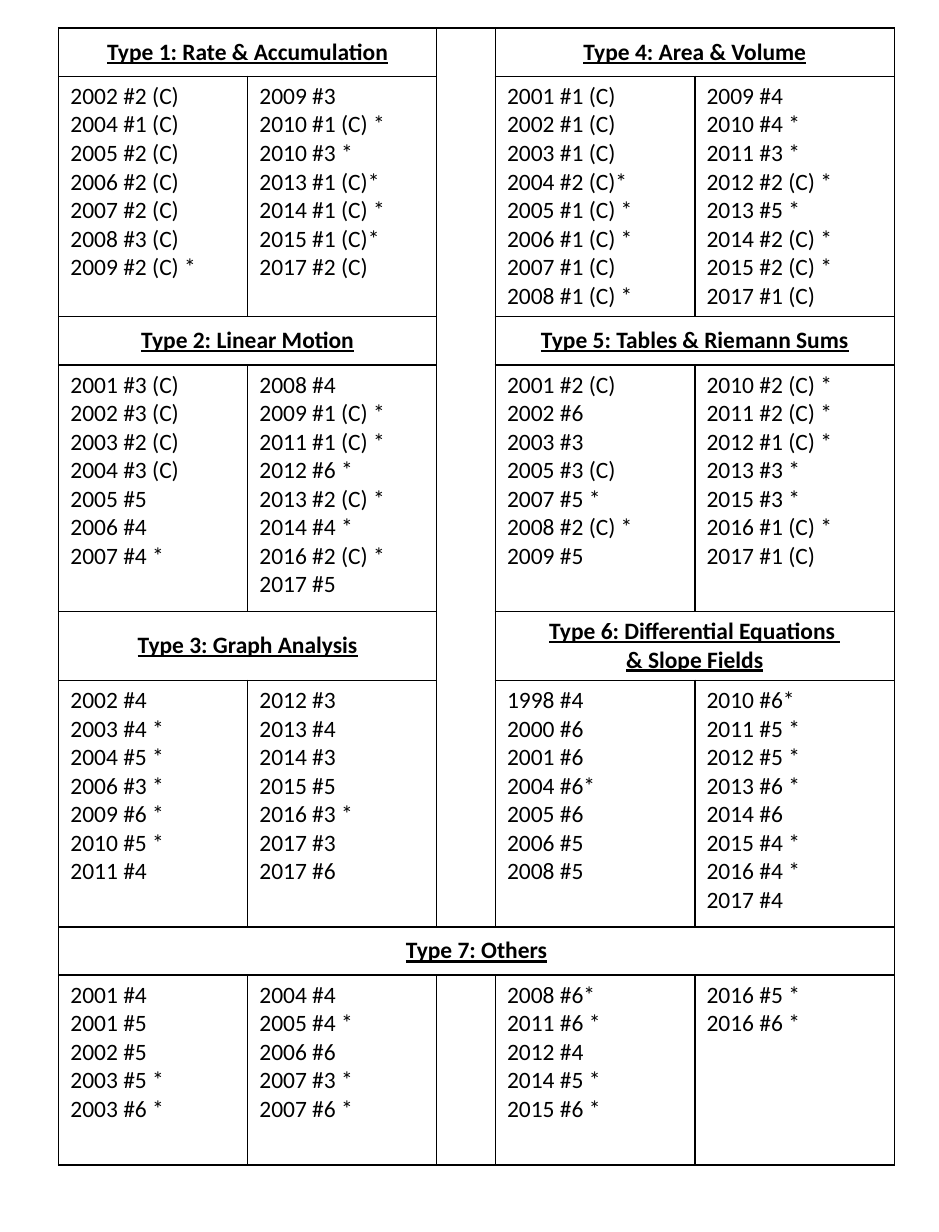
from copy import deepcopy

from pptx import Presentation
from pptx.dml.color import RGBColor
from pptx.enum.text import MSO_ANCHOR as Anchor, PP_ALIGN as Align
from pptx.oxml import parse_xml
from pptx.oxml.ns import nsdecls, qn
from pptx.util import Inches, Pt

BLACK = RGBColor(0, 0, 0)
WHITE = RGBColor(255, 255, 255)
ENTRY_FORMAT = {"name": "Calibri", "size": Pt(14.4), "bold": False, "underline": False}
HEADING_FORMAT = {**ENTRY_FORMAT, "bold": True, "underline": True}

COLUMN_WIDTHS = [1.61, 1.61, 0.5, 1.7, 1.7]
ROW_HEIGHTS = [0.41, 2.05, 0.41, 2.1, 0.59, 2.1, 0.41, 1.62]
ENTRY_COLUMNS = [0, 1, 3, 4]

SECTIONS = [
    (
        {0: "Type 1: Rate & Accumulation", 3: "Type 4: Area & Volume"},
        [
            "2002 #2 (C), 2004 #1 (C), 2005 #2 (C), 2006 #2 (C), 2007 #2 (C), 2008 #3 (C), 2009 #2 (C) *",
            "2009 #3, 2010 #1 (C) *, 2010 #3 *, 2013 #1 (C)*, 2014 #1 (C) *, 2015 #1 (C)*, 2017 #2 (C)",
            "2001 #1 (C), 2002 #1 (C), 2003 #1 (C), 2004 #2 (C)*, 2005 #1 (C) *, 2006 #1 (C) *, 2007 #1 (C), 2008 #1 (C) *",
            "2009 #4, 2010 #4 *, 2011 #3 *, 2012 #2 (C) *, 2013 #5 *, 2014 #2 (C) *, 2015 #2 (C) *, 2017 #1 (C)",
        ],
    ),
    (
        {0: "Type 2: Linear Motion", 3: "Type 5: Tables & Riemann Sums"},
        [
            "2001 #3 (C), 2002 #3 (C), 2003 #2 (C), 2004 #3 (C), 2005 #5, 2006 #4, 2007 #4 *",
            "2008 #4, 2009 #1 (C) *, 2011 #1 (C) *, 2012 #6 *, 2013 #2 (C) *, 2014 #4 *, 2016 #2 (C) *, 2017 #5",
            "2001 #2 (C), 2002 #6, 2003 #3, 2005 #3 (C), 2007 #5 *, 2008 #2 (C) *, 2009 #5",
            "2010 #2 (C) *, 2011 #2 (C) *, 2012 #1 (C) *, 2013 #3 *, 2015 #3 *, 2016 #1 (C) *, 2017 #1 (C)",
        ],
    ),
    (
        {0: "Type 3: Graph Analysis", 3: "Type 6: Differential Equations \v& Slope Fields"},
        [
            "2002 #4, 2003 #4 *, 2004 #5 *, 2006 #3 *, 2009 #6 *, 2010 #5 *, 2011 #4",
            "2012 #3, 2013 #4, 2014 #3, 2015 #5, 2016 #3 *, 2017 #3, 2017 #6",
            "1998 #4, 2000 #6, 2001 #6, 2004 #6*, 2005 #6, 2006 #5, 2008 #5",
            "2010 #6*, 2011 #5 *, 2012 #5 *, 2013 #6 *, 2014 #6, 2015 #4 *, 2016 #4 *, 2017 #4",
        ],
    ),
    (
        {0: "Type 7: Others"},
        [
            "2001 #4, 2001 #5, 2002 #5, 2003 #5 *, 2003 #6 *",
            "2004 #4, 2005 #4 *, 2006 #6, 2007 #3 *, 2007 #6 *",
            "2008 #6*, 2011 #6 *, 2012 #4, 2014 #5 *, 2015 #6 *",
            "2016 #5 *, 2016 #6 *",
        ],
    ),
]


def style_cell(cell):
    properties = cell._tc.get_or_add_tcPr()
    for side in ("lnL", "lnR", "lnT", "lnB"):
        properties.append(parse_xml(
            f'<a:{side} {nsdecls("a")} w="{Pt(1)}"><a:solidFill>'
            f'<a:srgbClr val="{BLACK}"/></a:solidFill></a:{side}>'
        ))
    cell.fill.solid()
    cell.fill.fore_color.rgb = WHITE


def write_paragraph(paragraph, text, font_format, alignment):
    paragraph.text = text
    paragraph.alignment = alignment
    for run in paragraph.runs:
        for attribute, value in font_format.items():
            setattr(run.font, attribute, value)
        run.font.color.rgb = BLACK
    for line_break in paragraph._p.findall(qn("a:br")):
        line_break.append(deepcopy(paragraph.runs[0]._r.rPr))


def write_heading(table, row, column, last_column, text):
    cell = table.cell(row, column)
    cell.merge(table.cell(row, last_column))
    cell.vertical_anchor = Anchor.MIDDLE
    write_paragraph(cell.text_frame.paragraphs[0], text, HEADING_FORMAT, Align.CENTER)


def write_entries(cell, entries):
    frame = cell.text_frame
    for index, entry in enumerate(entries.split(", ")):
        paragraph = frame.add_paragraph() if index else frame.paragraphs[0]
        write_paragraph(paragraph, entry, ENTRY_FORMAT, Align.LEFT)


def add_grid(slide):
    table = slide.shapes.add_table(
        len(ROW_HEIGHTS), len(COLUMN_WIDTHS), Inches(0.5), Inches(0.24),
        Inches(sum(COLUMN_WIDTHS)), Inches(sum(ROW_HEIGHTS)),
    ).table
    table.first_row = table.horz_banding = False
    for column, width in zip(table.columns, COLUMN_WIDTHS):
        column.width = Inches(width)
    for row, height in zip(table.rows, ROW_HEIGHTS):
        row.height = Inches(height)
    for cell in table.iter_cells():
        style_cell(cell)
    return table


def main():
    presentation = Presentation()
    presentation.slide_width = Inches(8)
    presentation.slide_height = Inches(10.5)
    slide = presentation.slides.add_slide(presentation.slide_layouts[6])
    table = add_grid(slide)
    table.cell(0, 2).merge(table.cell(5, 2))
    for section, (headings, entry_lists) in enumerate(SECTIONS):
        heading_row = 2 * section
        for column, heading in headings.items():
            last_column = column + 1 if len(headings) == 2 else len(COLUMN_WIDTHS) - 1
            write_heading(table, heading_row, column, last_column, heading)
        for column, entries in zip(ENTRY_COLUMNS, entry_lists):
            write_entries(table.cell(heading_row + 1, column), entries)
    presentation.save("out.pptx")


if __name__ == "__main__":
    main()
